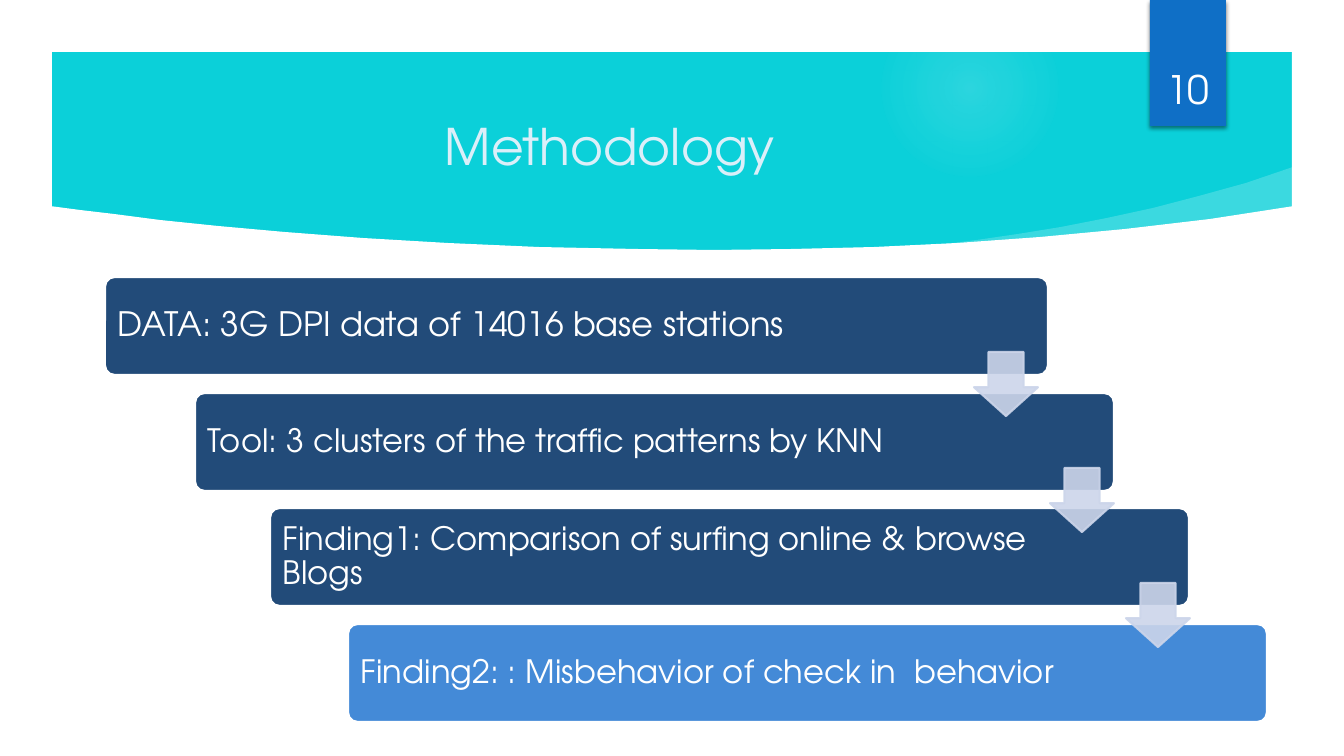
from pptx import Presentation
from pptx import util as u
from pptx.dml.color import RGBColor
from pptx.enum import shapes, text
from pptx.oxml import parse_xml
from pptx.oxml.ns import nsdecls, qn
from lxml import etree

WIDTH, HEIGHT = 1344, 756
SCALE = 12192000 / WIDTH
FONT = "TeX Gyre Adventor"
COLORS = {
    "band": "0BD0D9", "white": "FFFFFF", "glow": "F1F9FD", "tab": "0F6FC6",
    "title": "DBEFF9", "step": "224B79", "last": "448AD7", "arrow": "CCD5EA",
    "shadow": "000000",
}
# Lower edge of the band, then the lighter sweep at its right end
BAND_EDGE = [
    (50, 206), (80, 210), (114, 214), (160, 220), (218, 226), (285, 232),
    (363, 238), (448, 243), (539, 247), (637, 249), (714, 250), (792, 249),
    (874, 247), (957, 243), (1040, 237), (1125, 229), (1210, 219), (1294, 206),
]
SWEEP = [
    (941, 252), (1040, 250), (1140, 240), (1299, 216), (1293, 167), (1246, 183),
    (1199, 196), (1153, 208), (1107, 218), (1061, 227), (1018, 234), (977, 240),
    (937, 245),
]
# Text, left, width, room at the right, font size, fill
STEPS = [
    ("DATA: 3G DPI data of 14016 base stations", 105, 943, 119, 24, "step"),
    ("Tool: 3 clusters of the trafﬁc patterns by KNN", 195, 919, 150, 23, "step"),
    ("Finding1: Comparison of surfing online & browse Blogs", 270, 919, 150, 23, "step"),
    ("Finding2: : Misbehavior of check in  behavior", 348, 919, 150, 23, "last"),
]


def px(length):
    return u.Emu(round(length * SCALE))


def color(name):
    return RGBColor.from_string(COLORS[name])


def paint(shape, fill, line=None, alpha=None):
    shape.shadow.inherit = False
    shape.fill.solid()
    shape.fill.fore_color.rgb = color(fill)
    if line:
        shape.line.color.rgb = color(line)
        shape.line.width = u.Pt(1.5)
    else:
        shape.line.fill.background()
    if alpha:
        for tint in shape.element.spPr.iter(qn("a:srgbClr")):
            etree.SubElement(tint, qn("a:alpha")).set("val", str(alpha * 1000))
    return shape


def add_shape(page, kind, box, fill, line=None, alpha=None):
    shape = page.shapes.add_shape(kind, *map(px, box))
    return paint(shape, fill, line, alpha)


def add_outline(page, points, fill, alpha=None):
    builder = page.shapes.build_freeform(*points[0], scale=SCALE)
    builder.add_line_segments(points[1:], close=True)
    return paint(builder.convert_to_shape(), fill, alpha=alpha)


def write(shape, words, size, tint, align, anchor, insets):
    frame = shape.text_frame
    frame.word_wrap = True
    frame.vertical_anchor = anchor
    (frame.margin_left, frame.margin_top,
     frame.margin_right, frame.margin_bottom) = map(px, insets)
    frame.text = words
    para = frame.paragraphs[0]
    para.alignment = align
    span = para.runs[0]
    span.font.name = FONT
    span.font.size = u.Pt(size)
    span.font.color.rgb = color(tint)
    return para


def draw_backdrop(page, box):
    left, top, width, height = box
    page.background.fill.solid()
    page.background.fill.fore_color.rgb = color("band")

    # Soft round glow
    glow = add_shape(page, shapes.MSO_SHAPE.OVAL, (left + 882, top, 176, 176), "glow")
    stops = "".join(
        f'<a:gs pos="{place * 1000}"><a:srgbClr val="{COLORS["glow"]}">'
        f'<a:alpha val="{alpha * 1000}"/></a:srgbClr></a:gs>'
        for place, alpha in [(0, 14), (36, 7), (73, 0), (100, 0)])
    gradient = parse_xml(
        f'<a:gradFill {nsdecls("a")}><a:gsLst>{stops}</a:gsLst><a:path path="circle">'
        '<a:fillToRect l="50000" t="50000" r="50000" b="50000"/></a:path></a:gradFill>')
    solid = glow.element.spPr.find(qn("a:solidFill"))
    solid.getparent().replace(solid, gradient)

    # Sweep, white page below the band, white frame
    add_outline(page, [(left + x, top + y) for x, y in SWEEP], "white", 20)
    lower = BAND_EDGE + [(1294, 706), (50, 706)]
    add_outline(page, [(left + x, top + y) for x, y in lower], "white")
    frame = add_shape(page, shapes.MSO_SHAPE.FRAME, box, "white")
    frame.adjustments[0] = 52 / height


def draw_page_tab(page, box):
    tab = add_shape(page, shapes.MSO_SHAPE.RECTANGLE, box, "tab")
    effects = tab.element.spPr.find(qn("a:effectLst"))
    effects.append(parse_xml(
        f'<a:outerShdw {nsdecls("a")} blurRad="38100" dist="25400" dir="5400000" '
        f'rotWithShape="0"><a:srgbClr val="{COLORS["shadow"]}"><a:alpha val="45000"/>'
        '</a:srgbClr></a:outerShdw>'))
    write(tab, "10", 28, "white", text.PP_ALIGN.CENTER,
          text.MSO_ANCHOR.BOTTOM, (0, 0, 0, 14))


def draw_title(page, box):
    title = page.shapes.add_textbox(*map(px, box))
    write(title, "Methodology", 36, "title", text.PP_ALIGN.CENTER,
          text.MSO_ANCHOR.MIDDLE, (10, 5, 10, 5))


def draw_steps(page, box):
    left, top, width, height = box
    bar_height, arrow_size = 98, 64
    pitch = (height - bar_height) / (len(STEPS) - 1)
    tops = [top + round(row * pitch) for row in range(len(STEPS))]

    # Staggered bars
    for (words, offset, bar_width, room, size, fill), bar_top in zip(STEPS, tops):
        bar = add_shape(page, shapes.MSO_SHAPE.ROUNDED_RECTANGLE,
                        (left + offset - STEPS[0][1], bar_top, bar_width, bar_height),
                        fill, "white")
        bar.adjustments[0] = 0.1
        para = write(bar, words, size, "white", text.PP_ALIGN.LEFT,
                     text.MSO_ANCHOR.MIDDLE, (10, 10, room, 10))
        para.line_spacing = 0.9

    # Arrows from each bar to the next
    for row, bar_top in enumerate(tops[:-1]):
        arrow = add_shape(page, shapes.MSO_SHAPE.DOWN_ARROW,
                          (left + 869 + 76 * row, bar_top + 75, arrow_size, arrow_size),
                          "arrow", "arrow", 90)
        arrow.adjustments[0] = 0.55
        arrow.adjustments[1] = 0.45


def main():
    deck = Presentation()
    deck.slide_width, deck.slide_height = px(WIDTH), px(HEIGHT)
    page = deck.slides.add_slide(deck.slide_layouts[6])
    draw_backdrop(page, (0, 0, WIDTH, HEIGHT))
    draw_page_tab(page, (1150, 0, 76, 126))
    draw_title(page, (127, 107, 966, 77))
    draw_steps(page, (105, 277, 1162, 445))
    deck.save("out.pptx")


if __name__ == "__main__":
    main()
